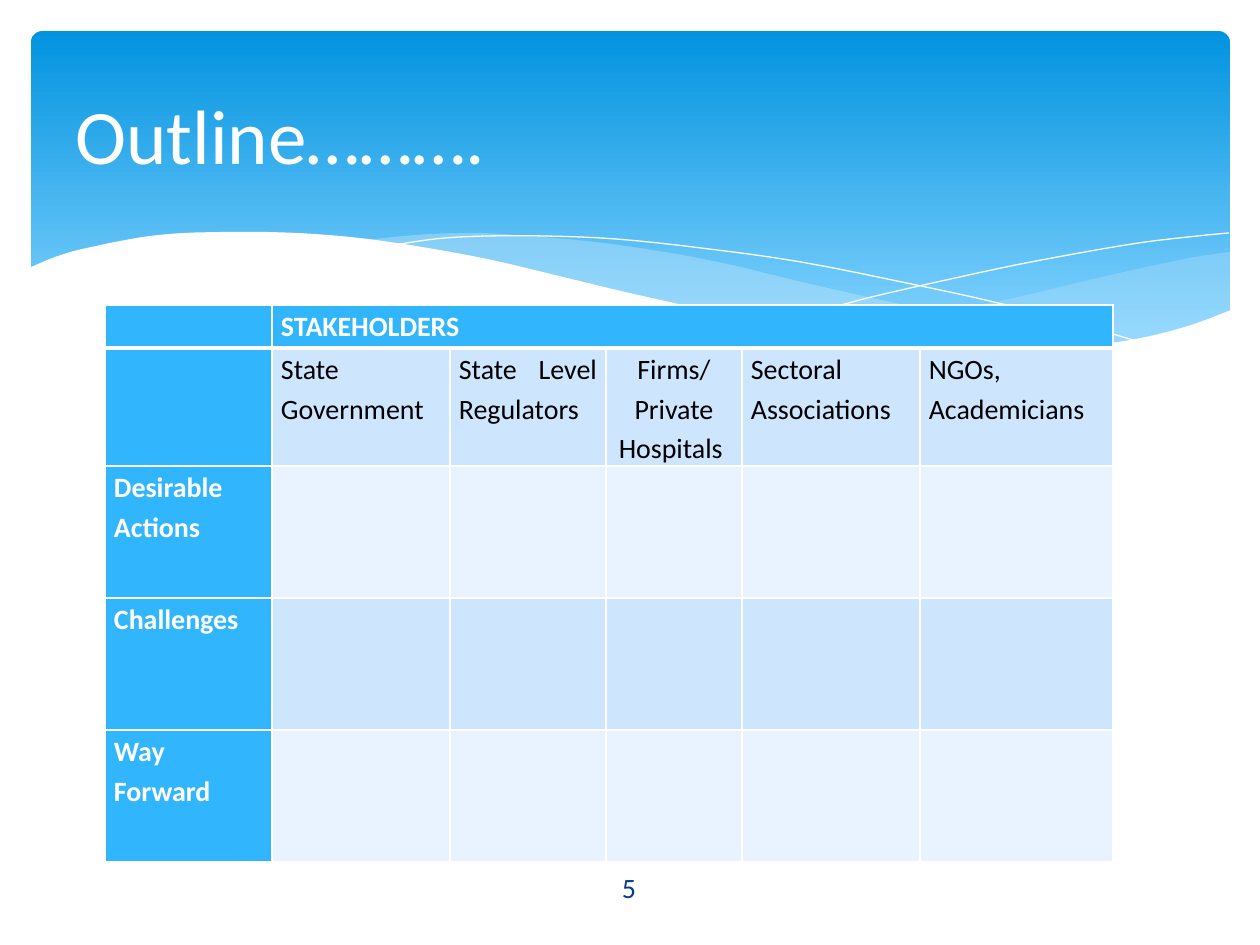
import pptx
import pptx.dml.color
import pptx.enum.shapes
import pptx.enum.text
import pptx.oxml
import pptx.oxml.ns
import pptx.util

EMU_PER_PX = 914400 // 126
WHITE, BLUE, PALE, PALER, SKY = "FFFFFF", "31B6FD", "CEE5FE", "E8F3FF", "C6E7FC"
ALIGN = pptx.enum.text.PP_ALIGN
CURVE_STEPS = 4

# Knots of the wave edges, in px
RIGHT_WAVE = [
    [(1230, 252), (1195, 257), (1142, 268), (1085, 281), (1014, 298), (949, 312),
     (890, 324), (833, 334)],
    [(833, 334), (888, 342), (938, 346), (983, 349), (1025, 350), (1064, 349),
     (1099, 345), (1130, 340), (1160, 334), (1187, 326), (1213, 318), (1230, 311)],
]
MIDDLE_WAVE = [
    [(1125, 344), (1055, 334), (976, 320), (890, 302), (793, 280), (736, 266),
     (682, 255), (632, 247), (586, 241), (529, 236), (479, 233), (433, 234),
     (394, 237), (360, 241)],
    [(360, 241), (431, 251), (509, 266), (566, 280), (668, 302), (757, 320),
     (819, 333), (876, 341), (926, 346), (974, 349), (1017, 350), (1056, 350),
     (1092, 348), (1125, 344)],
]
FALLING_LINE = [[(389, 246), (413, 242), (445, 238), (488, 236), (545, 236), (616, 239),
                 (701, 248), (801, 262), (916, 285), (1002, 304), (1095, 329), (1143, 343)]]
RISING_LINE = [[(772, 324), (823, 310), (876, 296), (942, 281), (1016, 265), (1091, 251),
                (1146, 242), (1198, 236), (1229, 233)]]
WHITE_WAVE = [
    [(1231, 310), (1197, 323), (1159, 334), (1118, 342), (1071, 347), (1019, 349),
     (959, 347), (892, 340), (817, 330), (730, 315), (634, 294), (563, 277),
     (492, 260), (428, 248), (368, 239), (315, 234), (266, 232), (223, 232),
     (184, 233), (150, 236), (120, 241), (96, 246), (74, 251), (58, 256),
     (45, 261), (29, 268)],
    [(29, 415), (1231, 415)],
]

# Table content
COLUMN_WIDTHS = [167, 178, 156, 136, 178, 193]
ROW_HEIGHTS = [43, 87, 132, 132, 132]
GROUPS = ["State Government", "State Level Regulators", "Firms/Private Hospitals ",
          "Sectoral Associations", "NGOs, Academicians"]
ROW_LABELS = ["", "", "Desirable Actions", "Challenges", "Way Forward"]


def px(value):
    return pptx.util.Emu(round(value * EMU_PER_PX))


def color(hex_string):
    return pptx.dml.color.RGBColor.from_string(hex_string)


def smooth_points(knots):
    """Sample a Catmull-Rom curve through the knots."""
    padded = [knots[0], *knots, knots[-1]]
    points = [knots[0]]
    for a, b, c, d in zip(padded, padded[1:], padded[2:], padded[3:]):
        for step in range(1, CURVE_STEPS + 1):
            t = step / CURVE_STEPS
            points.append(tuple(
                b[i] + t * (c[i] - a[i]) / 2
                + t**2 * (2 * a[i] - 5 * b[i] + 4 * c[i] - d[i]) / 2
                + t**3 * (3 * b[i] - a[i] - 3 * c[i] + d[i]) / 2
                for i in (0, 1)))
    return points


def add_curve(slide, edges, fill=None, opacity=100):
    """Add a filled wave, or a white hairline when no fill is given."""
    points = [(px(x), px(y)) for edge in edges for x, y in smooth_points(edge)]
    builder = slide.shapes.build_freeform(*points[0])
    builder.add_line_segments(points[1:], close=fill is not None)
    shape = builder.convert_to_shape()
    shape.shadow.inherit = False
    if fill is None:
        shape.fill.background()
        shape.line.color.rgb = color(WHITE)
        shape.line.width = 0
        return
    shape.fill.solid()
    shape.fill.fore_color.rgb = color(fill)
    shape.line.fill.background()
    if opacity < 100:
        qn = pptx.oxml.ns.qn
        fill_color = shape.element.find(f".//{qn('a:solidFill')}/{qn('a:srgbClr')}")
        alpha = fill_color.makeelement(qn("a:alpha"), {"val": str(opacity * 1000)})
        fill_color.append(alpha)


def add_banner(slide):
    shape = slide.shapes.add_shape(pptx.enum.shapes.MSO_SHAPE.ROUNDED_RECTANGLE,
                                   px(31), px(31), px(1199), px(340))
    shape.adjustments[0] = 0.034
    shape.shadow.inherit = False
    shape.line.fill.background()
    shape.fill.gradient()
    shape.fill.gradient_angle = 270
    stops = [(0, "0293E0"), (0.9, "83D3FE")]
    for stop, (position, hex_string) in zip(shape.fill.gradient_stops, stops):
        stop.position = position
        stop.color.rgb = color(hex_string)


def write_text(paragraph, text, size, hex_string, bold=False, **paragraph_format):
    for name, value in paragraph_format.items():
        setattr(paragraph, name, value)
    run = paragraph.add_run()
    run.text = text
    run.font.color.rgb = color(hex_string)
    font_format = {"name": "Calibri", "size": pptx.util.Pt(size), "bold": bold}
    for name, value in font_format.items():
        setattr(run.font, name, value)


def add_text(slide, box, text, size, hex_string, alignment):
    frame = slide.shapes.add_textbox(*map(px, box)).text_frame
    frame.word_wrap = True
    frame.vertical_anchor = pptx.enum.text.MSO_ANCHOR.MIDDLE
    write_text(frame.paragraphs[0], text, size, hex_string, alignment=alignment)


def set_borders(cell, widths):
    properties = cell._tc.get_or_add_tcPr()
    for index, (side, width) in enumerate(widths.items()):
        properties.insert(index, pptx.oxml.parse_xml(
            f'<a:ln{side} {pptx.oxml.ns.nsdecls("a")} w="{pptx.util.Pt(width)}">'
            f'<a:solidFill><a:srgbClr val="{WHITE}"/></a:solidFill></a:ln{side}>'))


def style_cell(cell, row, column):
    cell_format = {"margin_left": px(9), "margin_right": px(9),
                   "margin_top": 0, "margin_bottom": 0}
    for name, value in cell_format.items():
        setattr(cell, name, value)
    is_header = row == 0 or column == 0
    cell.fill.solid()
    cell.fill.fore_color.rgb = color(BLUE if is_header else PALE if row % 2 else PALER)
    # A thick rule parts the heading row from the body
    set_borders(cell, {"L": 1, "R": 1, "T": 3 if row == 1 else 1, "B": 3 if row == 0 else 1})


def add_stakeholder_table(slide):
    frame = slide.shapes.add_table(len(ROW_HEIGHTS), len(COLUMN_WIDTHS), px(105), px(305),
                                   px(sum(COLUMN_WIDTHS)), px(sum(ROW_HEIGHTS)))
    table = frame.table
    table.first_row = table.horz_banding = False
    for column, width in zip(table.columns, COLUMN_WIDTHS):
        column.width = px(width)
    for row, height in zip(table.rows, ROW_HEIGHTS):
        row.height = px(height)

    texts = {(0, 1): "STAKEHOLDERS"}
    texts.update({(1, column): text for column, text in enumerate(GROUPS, 1)})
    texts.update({(row, 0): text for row, text in enumerate(ROW_LABELS) if text})
    for row in range(len(ROW_HEIGHTS)):
        for column in range(len(COLUMN_WIDTHS)):
            cell = table.cell(row, column)
            style_cell(cell, row, column)
            if (row, column) in texts:
                is_header = row == 0 or column == 0
                centred = (row, column) == (1, 3)
                write_text(cell.text_frame.paragraphs[0], texts[row, column], 16,
                           WHITE if is_header else "000000", is_header, line_spacing=1.15,
                           alignment=ALIGN.CENTER if centred else ALIGN.JUSTIFY)
    table.cell(0, 1).merge(table.cell(0, len(COLUMN_WIDTHS) - 1))


def main():
    presentation = pptx.Presentation()
    presentation.slide_width, presentation.slide_height = px(1260), px(945)
    slide = presentation.slides.add_slide(presentation.slide_layouts[6])

    # Banner with waves
    add_banner(slide)
    add_curve(slide, RIGHT_WAVE, SKY, 29)
    add_curve(slide, MIDDLE_WAVE, SKY, 40)
    add_curve(slide, FALLING_LINE)
    add_curve(slide, RISING_LINE)
    add_curve(slide, WHITE_WAVE, WHITE)

    # Content
    add_stakeholder_table(slide)
    add_text(slide, (63, 47, 1134, 173), "Outline……….", 44, WHITE, ALIGN.LEFT)
    add_text(slide, (549, 862, 160, 50), "5", 16, "073E87", ALIGN.CENTER)
    presentation.save("out.pptx")


if __name__ == "__main__":
    main()
